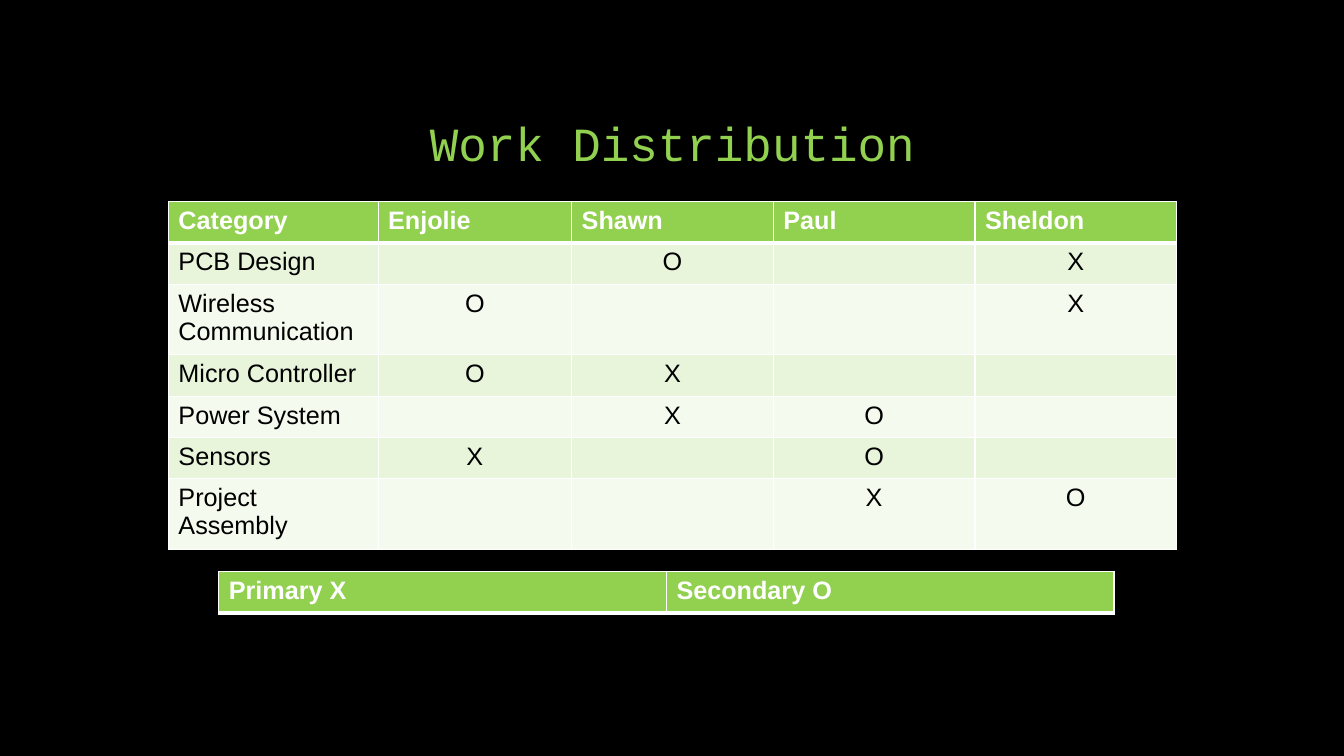
from lxml.etree import SubElement
from pptx import Presentation
from pptx.dml.color import RGBColor
from pptx.enum.text import MSO_ANCHOR as Anchor, PP_ALIGN as Align
from pptx.oxml.ns import qn
from pptx.util import Inches, Pt

TITLE = "Work Distribution"
WORK = [
    ("Category", "Enjolie", "Shawn", "Paul", "Sheldon"),
    ("PCB Design", "", "O", "", "X"),
    ("Wireless Communication", "O", "", "", "X"),
    ("Micro Controller", "O", "X", "", ""),
    ("Power System", "", "X", "O", ""),
    ("Sensors", "X", "", "O", ""),
    ("Project Assembly", "", "", "X", "O"),
]
LEGEND = [("Primary X", "Secondary O")]
WORK_COLUMNS = (2.08, 1.92, 2, 2, 2)
LEGEND_COLUMNS = (4.44, 4.44)
ROW_HEIGHT = 0.41
COLORS = {
    "background": "000000",
    "accent": "92D050",
    "header_text": "FFFFFF",
    "body_text": "000000",
    "odd_row": "E8F5DB",
    "even_row": "F5FAEF",
    "border": "FFFFFF",
}


def color(name):
    return RGBColor.from_string(COLORS[name])


def style_text(paragraph, font_name, size, color_name, bold=False):
    font = paragraph.font
    font.name, font.size, font.bold = font_name, Pt(size), bold
    font.color.rgb = color(color_name)


def add_borders(cell, bottom_width):
    properties = cell._tc.get_or_add_tcPr()
    widths = {"a:lnL": 1, "a:lnR": 1, "a:lnT": 1, "a:lnB": bottom_width}
    for index, (side, width) in enumerate(widths.items()):
        line = SubElement(properties, qn(side), w=str(Pt(width)))
        fill = SubElement(line, qn("a:solidFill"))
        SubElement(fill, qn("a:srgbClr"), val=COLORS["border"])
        properties.insert(index, line)


def add_grid(slide, rows, columns, left, top):
    table = slide.shapes.add_table(
        len(rows), len(columns), Inches(left), Inches(top),
        Inches(sum(columns)), Inches(ROW_HEIGHT * len(rows)),
    ).table
    for column, width in zip(table.columns, columns):
        column.width = Inches(width)
    for r, row in enumerate(rows):
        header = r == 0
        fill = "accent" if header else "odd_row" if r % 2 else "even_row"
        for c, label in enumerate(row):
            cell = table.cell(r, c)
            cell.fill.solid()
            cell.fill.fore_color.rgb = color(fill)
            add_borders(cell, 3 if header else 1)
            cell.text = label
            paragraph = cell.text_frame.paragraphs[0]
            paragraph.alignment = Align.LEFT if header or c == 0 else Align.CENTER
            style_text(paragraph, "Arial", 18,
                       "header_text" if header else "body_text", header)


def main():
    deck = Presentation()
    deck.slide_width, deck.slide_height = Inches(13.33), Inches(7.5)
    slide = deck.slides.add_slide(deck.slide_layouts[6])
    slide.background.fill.solid()
    slide.background.fill.fore_color.rgb = color("background")

    title = slide.shapes.add_textbox(
        Inches(1.67), Inches(0.5), Inches(10), Inches(1.25)).text_frame
    title.word_wrap = True
    title.vertical_anchor = Anchor.BOTTOM
    title.text = TITLE
    heading = title.paragraphs[0]
    heading.alignment = Align.CENTER
    heading.line_spacing = 0.9
    style_text(heading, "Courier New", 34, "accent")

    add_grid(slide, WORK, WORK_COLUMNS, 1.67, 2)
    add_grid(slide, LEGEND, LEGEND_COLUMNS, 2.17, 5.67)
    deck.save("out.pptx")


if __name__ == "__main__":
    main()
